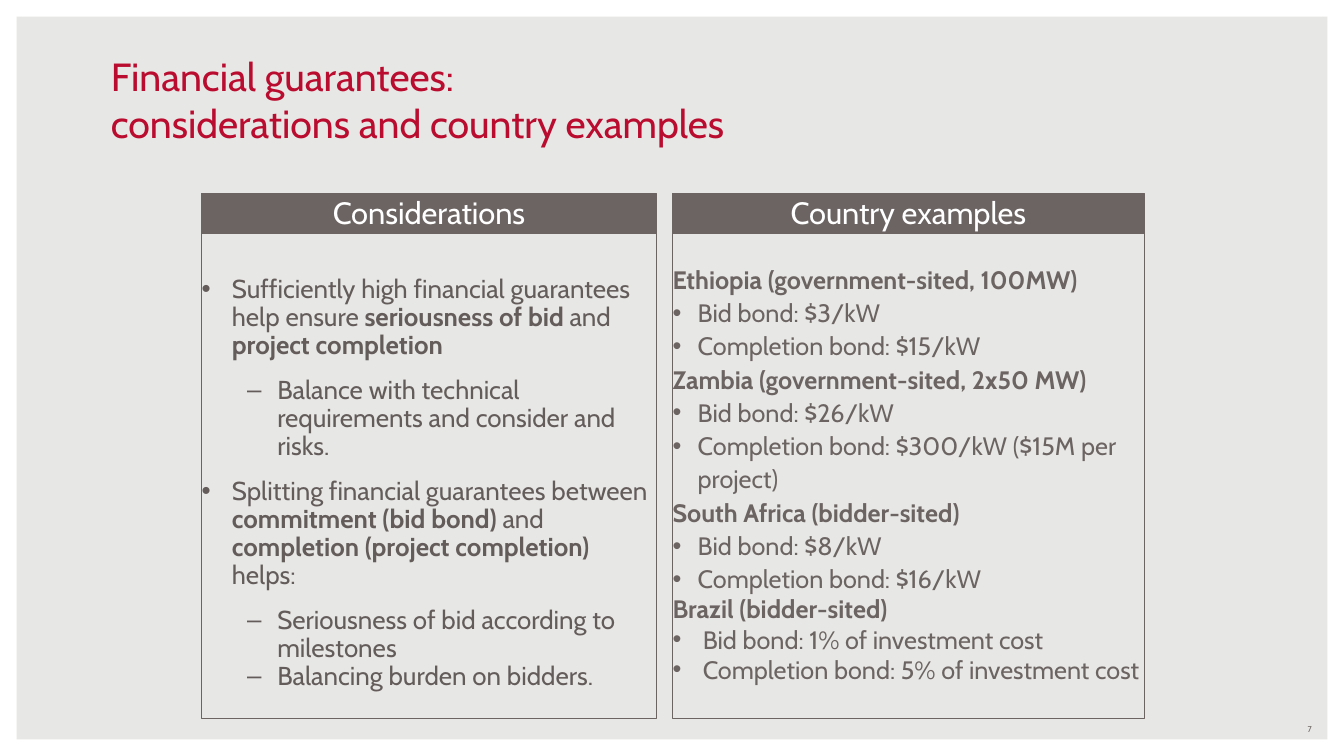
from lxml import etree
from pptx import Presentation
from pptx.dml.color import RGBColor
from pptx.enum.shapes import MSO_SHAPE
from pptx.enum.text import MSO_ANCHOR, MSO_AUTO_SIZE, PP_ALIGN
from pptx.oxml.ns import qn
from pptx.util import Inches, Pt

FRAME, RECT = MSO_SHAPE.FRAME, MSO_SHAPE.RECTANGLE
TOP, MIDDLE, BOTTOM = MSO_ANCHOR.TOP, MSO_ANCHOR.MIDDLE, MSO_ANCHOR.BOTTOM
LEFT, CENTER, RIGHT = PP_ALIGN.LEFT, PP_ALIGN.CENTER, PP_ALIGN.RIGHT
NO_AUTOSIZE = MSO_AUTO_SIZE.NONE

COLORS = {"background": "E7E7E5", "white": "FFFFFF", "red": "BA0C2F",
          "taupe": "6C6463", "dark_taupe": "635C5B"}
FONT = "Cabin"


def rgb(name):
    return RGBColor.from_string(COLORS[name])


def write(paragraph, text, size=18, color="taupe", align=LEFT, bullet=None,
          level=0, margin=0, hanging=0, spacing=1.0, after=0):
    """Fill a paragraph; **marks** switch bold and a newline breaks the line."""
    paragraph.level = level
    properties = paragraph._p.get_or_add_pPr()
    properties.set("marL", str(Inches(margin)))
    properties.set("indent", str(-Inches(hanging)))
    if bullet:
        etree.SubElement(properties, qn("a:buChar")).set("char", bullet)
    else:
        etree.SubElement(properties, qn("a:buNone"))
    paragraph.alignment = align
    paragraph.line_spacing = spacing
    paragraph.space_before = Pt(0)
    paragraph.space_after = Pt(after)
    for part, words in enumerate(text.split("**")):
        for number, line in enumerate(words.split("\n")):
            if number:
                paragraph.add_line_break()
            if line:
                run = paragraph.add_run()
                run.text = line
                run.font.name = FONT
                run.font.size = Pt(size)
                run.font.bold = part % 2 == 1
                run.font.color.rgb = rgb(color)


class SlideBuilder:
    def __init__(self, slide):
        self.slide = slide
        fill = slide.background.fill
        fill.solid()
        fill.fore_color.rgb = rgb("background")

    def shape(self, kind, box, fill, line=None):
        shape = self.slide.shapes.add_shape(kind, *map(Inches, box))
        shape.shadow.inherit = False
        shape.fill.solid()
        shape.fill.fore_color.rgb = rgb(fill)
        self.outline(shape, line)
        return shape

    def outline(self, shape, color):
        if color:
            shape.line.color.rgb = rgb(color)
            shape.line.width = Pt(0.75)
        else:
            shape.line.fill.background()

    def frame_text(self, shape, anchor, insets):
        frame = shape.text_frame
        frame.word_wrap = True
        frame.auto_size = NO_AUTOSIZE
        frame.vertical_anchor = anchor
        (frame.margin_left, frame.margin_top,
         frame.margin_right, frame.margin_bottom) = map(Inches, insets)
        return frame

    def place(self, placeholder, box):
        (placeholder.left, placeholder.top,
         placeholder.width, placeholder.height) = map(Inches, box)

    def title(self, text, box):
        title = self.slide.shapes.title
        self.place(title, box)
        frame = self.frame_text(title, BOTTOM, (0.1, 0.05, 0.1, 0.05))
        write(frame.paragraphs[0], text, size=28, color="red")

    def heading(self, text, box):
        heading = self.shape(RECT, box, "taupe", "taupe")
        frame = self.frame_text(heading, TOP, (0, 0, 0, 0))
        write(frame.paragraphs[0], text, size=22, color="white", align=CENTER)

    def body(self, index, items, box, top_inset):
        body = self.slide.placeholders[index]
        self.place(body, box)
        self.outline(body, "taupe")
        frame = self.frame_text(body, TOP, (0, top_inset, 0, 0))
        for number, (text, style) in enumerate(items):
            paragraph = frame.add_paragraph() if number else frame.paragraphs[0]
            write(paragraph, text, **style)

    def page_number(self, text, box):
        label = self.slide.shapes.add_textbox(*map(Inches, box))
        frame = self.frame_text(label, MIDDLE, (0.1, 0.05, 0.1, 0.05))
        write(frame.paragraphs[0], text, size=6, align=RIGHT)


# List styles
POINT = dict(size=18.5, color="dark_taupe", bullet="•", margin=0.3,
             hanging=0.3, spacing=0.9, after=12)
SUBPOINT = {**POINT, "bullet": "–", "level": 1, "margin": 0.75}
COUNTRY = dict(spacing=1.1)
BOND = dict(bullet="•", margin=0.25, hanging=0.25, spacing=1.1)
LAST_COUNTRY = dict(spacing=1.0)
LAST_BOND = dict(bullet="•", margin=0.3, hanging=0.3)

# Content
CONSIDERATIONS = [
    ("Sufficiently high financial guarantees help ensure "
     "**seriousness of bid **and **project completion**", POINT),
    ("Balance with technical requirements and consider and risks.", SUBPOINT),
    ("Splitting financial guarantees between **commitment (bid bond) **and "
     "**completion (project completion)** helps:", POINT),
    ("Seriousness of bid according to milestones", {**SUBPOINT, "after": 0}),
    ("Balancing burden on bidders.", SUBPOINT),
]
BONDS_BY_COUNTRY = [
    ("Ethiopia (government-sited, 100MW)", "$3/kW", "$15/kW", COUNTRY, BOND),
    ("Zambia (government-sited, 2x50 MW)", "$26/kW",
     "$300/kW ($15M per project)", COUNTRY, BOND),
    ("South Africa (bidder-sited)", "$8/kW", "$16/kW", COUNTRY, BOND),
    ("Brazil (bidder-sited)", "1% of investment cost",
     "5% of investment cost", LAST_COUNTRY, LAST_BOND),
]
COUNTRY_EXAMPLES = [
    item
    for country, bid, completion, country_style, bond_style in BONDS_BY_COUNTRY
    for item in ((f"**{country}**", country_style),
                 (f"Bid bond: {bid}", bond_style),
                 (f"Completion bond: {completion}", bond_style))
]
# Heading, items, left, width, space above the list
COLUMNS = [
    ("Considerations", CONSIDERATIONS, 2, 4.51, 0.42),
    ("Country examples", COUNTRY_EXAMPLES, 6.67, 4.68, 0.27),
]
HEADING_TOP, HEADING_HEIGHT, BODY_HEIGHT = 1.92, 0.4, 4.81


def main():
    deck = Presentation()
    deck.slide_width, deck.slide_height = Inches(13.33), Inches(7.5)
    builder = SlideBuilder(deck.slides.add_slide(deck.slide_layouts[3]))

    # White border and page number
    border = builder.shape(FRAME, (0, 0, 13.33, 7.5), "white")
    border.adjustments[0] = 0.022
    builder.page_number("7", (10, 7.13, 3.11, 0.2))

    # Title
    builder.title("Financial guarantees:\nconsiderations and country examples",
                  (1, 0.5, 11.33, 1))

    # Two columns
    for index, (heading, items, left, width, inset) in enumerate(COLUMNS, 1):
        builder.body(index, items, (left, HEADING_TOP + HEADING_HEIGHT,
                                    width, BODY_HEIGHT), inset)
        builder.heading(heading, (left, HEADING_TOP, width, HEADING_HEIGHT))

    deck.save("out.pptx")


if __name__ == "__main__":
    main()
